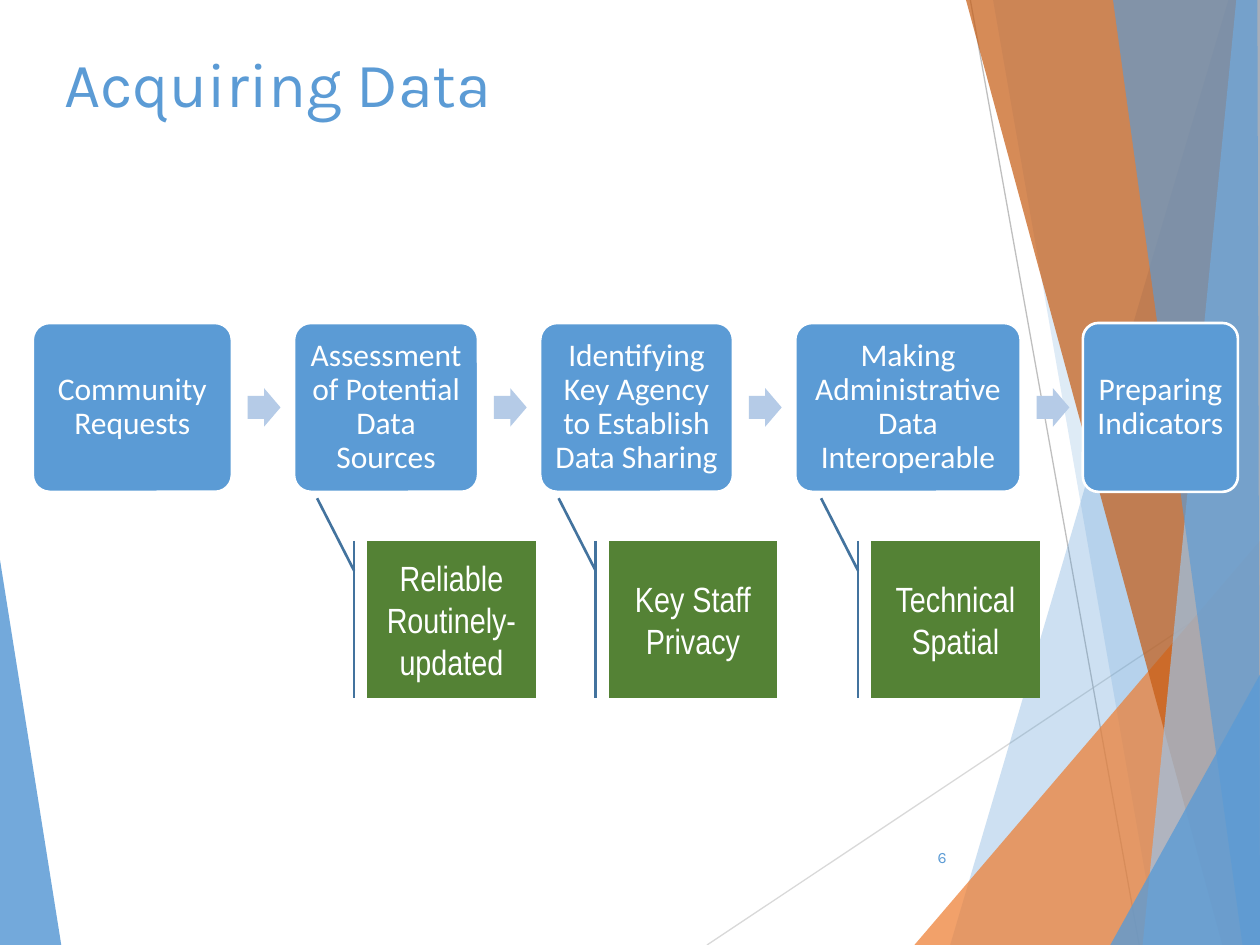
import pptx
import pptx.util
import pptx.dml.color
import pptx.enum.shapes
import pptx.enum.text
import pptx.oxml.ns
from lxml import etree

Pt = pptx.util.Pt
RGBColor = pptx.dml.color.RGBColor
SHAPE = pptx.enum.shapes.MSO_SHAPE
ALIGN = pptx.enum.text.PP_ALIGN
ANCHOR = pptx.enum.text.MSO_ANCHOR
qn = pptx.oxml.ns.qn

BLUE = RGBColor(0x5B, 0x9B, 0xD5)
LIGHT_BLUE = RGBColor(0x9D, 0xC3, 0xE6)
ARROW_BLUE = RGBColor(0xB5, 0xCB, 0xE7)
CALLOUT_LINE = RGBColor(0x43, 0x73, 0x9E)
ORANGE = RGBColor(0xED, 0x7D, 0x31)
DARK_ORANGE = RGBColor(0xC5, 0x5A, 0x11)
GREEN = RGBColor(0x54, 0x82, 0x35)
GRAY = RGBColor(0xBF, 0xBF, 0xBF)
LIGHT_GRAY = RGBColor(0xD9, 0xD9, 0xD9)
WHITE = RGBColor(0xFF, 0xFF, 0xFF)
W, H = 720, 540


def add_filled(kind, x, y, w, h, fill, line=None):
    sp = s.shapes.add_shape(kind, Pt(x), Pt(y), Pt(w), Pt(h))
    sp.shadow.inherit = False
    sp.fill.solid()
    sp.fill.fore_color.rgb = fill
    if line is None:
        sp.line.fill.background()
    else:
        sp.line.color.rgb = line
        sp.line.width = Pt(1.5)
    return sp


def write(sp, text, font, size, color, align, anchor):
    tf = sp.text_frame
    tf.text = text
    tf.word_wrap = True
    tf.vertical_anchor = anchor
    for p in tf.paragraphs:
        p.alignment = align
        for r in p.runs:
            r.font.name = font
            r.font.size = Pt(size)
            r.font.color.rgb = color
    return tf


prs = pptx.Presentation()
prs.slide_width, prs.slide_height = Pt(W), Pt(H)
s = prs.slides.add_slide(prs.slide_layouts[5])

# Background: translucent facets, with two thin lines behind the right-hand ones
left_facet = ([(0, 320), (35, H), (0, H)], BLUE, 85)
right_facets = [
    ([(702, 0), (543, H), (W, H), (W, 0)], BLUE, 30),
    ([(567.5, 0), (661.5, H), (W, H), (W, 0)], BLUE, 20),
    ([(522.5, H), (W, 309), (W, H)], ORANGE, 72),
    ([(552, 0), (698.5, H), (W, H), (W, 0)], DARK_ORANGE, 70),
    ([(706.5, 0), (653, H), (W, H), (W, 0)], LIGHT_BLUE, 70),
    ([(636, 0), (710, H), (W, H), (718.5, 0)], BLUE, 65),
    ([(634.5, H), (W, 385.5), (W, H)], BLUE, 80),
]
for x1, y1, x2, y2, color in [(404, H, W, 329.5, LIGHT_GRAY),
                              (554.5, 0, 651, H, GRAY)]:
    line = s.shapes.add_connector(pptx.enum.shapes.MSO_CONNECTOR.STRAIGHT,
                                  Pt(x1), Pt(y1), Pt(x2), Pt(y2))
    line.line.color.rgb = color
    line.line.width = Pt(0.75)
    etree.SubElement(line.element.spPr, qn("a:effectLst"))

for points, color, opacity in [left_facet] + right_facets:
    corners = [(Pt(x), Pt(y)) for x, y in points]
    builder = s.shapes.build_freeform(*corners[0])
    builder.add_line_segments(corners[1:])
    facet = builder.convert_to_shape()
    facet.shadow.inherit = False
    facet.line.fill.background()
    facet.fill.solid()
    facet.fill.fore_color.rgb = color
    clr = facet.element.spPr.find(qn("a:solidFill"))[0]
    etree.SubElement(clr, qn("a:alpha"), val=str(opacity * 1000))

# Title, brought in front of the background
title = s.shapes.title
title.element.getparent().append(title.element)
title.left, title.top, title.width, title.height = Pt(29.5), Pt(21.6), Pt(612), Pt(90)
write(title, "Acquiring Data", "Karla", 36, BLUE, ALIGN.LEFT, ANCHOR.TOP)

number = s.shapes.add_textbox(Pt(507.5), Pt(475.5), Pt(40.5), Pt(28.8))
write(number, "6", "Karla", 9, BLUE, ALIGN.RIGHT, ANCHOR.MIDDLE)

# Process steps of varying width with an arrow in each gap
STEP_TOP, STEP_H, GAP = 184.6, 96.5, 35.5
ARROW_W, ARROW_H = 18.8, 22
steps = [
    ("Community Requests", 113.8),
    ("Assessment of Potential Data Sources", 105.2),
    ("Identifying Key Agency to Establish Data Sharing", 110.2),
    ("Making Administrative Data Interoperable", 128.9),
    ("Preparing Indicators", 88.6),
]
x = 18.7
for i, (text, width) in enumerate(steps):
    if i:
        arrow = add_filled(SHAPE.RIGHT_ARROW, x - GAP + 9,
                           STEP_TOP + (STEP_H - ARROW_H) / 2,
                           ARROW_W, ARROW_H, ARROW_BLUE)
        arrow.adjustments[0] = 0.6
    step = add_filled(SHAPE.ROUNDED_RECTANGLE, x, STEP_TOP, width, STEP_H, BLUE, WHITE)
    step.adjustments[0] = 0.1
    tf = write(step, text, "Calibri", 18, WHITE, ALIGN.CENTER, ANCHOR.MIDDLE)
    # The rounded corners already inset the text by almost 3 points
    tf.margin_left = tf.margin_right = Pt(4.5)
    tf.paragraphs[0].line_spacing = 0.9
    x += width + GAP

# Callouts under the three middle steps
for x, text in [(210, "Reliable\nRoutinely- updated"),
                (348, "Key Staff\nPrivacy"),
                (498, "Technical\nSpatial")]:
    callout = add_filled(SHAPE.LINE_CALLOUT_1_ACCENT_BAR, x, 309, 96, 90,
                         GREEN, CALLOUT_LINE)
    for i, value in enumerate([0.19, -0.08, -0.27, -0.3]):
        callout.adjustments[i] = value
    write(callout, text, "Arial Narrow", 20, WHITE, ALIGN.CENTER, ANCHOR.MIDDLE)

prs.save("out.pptx")
